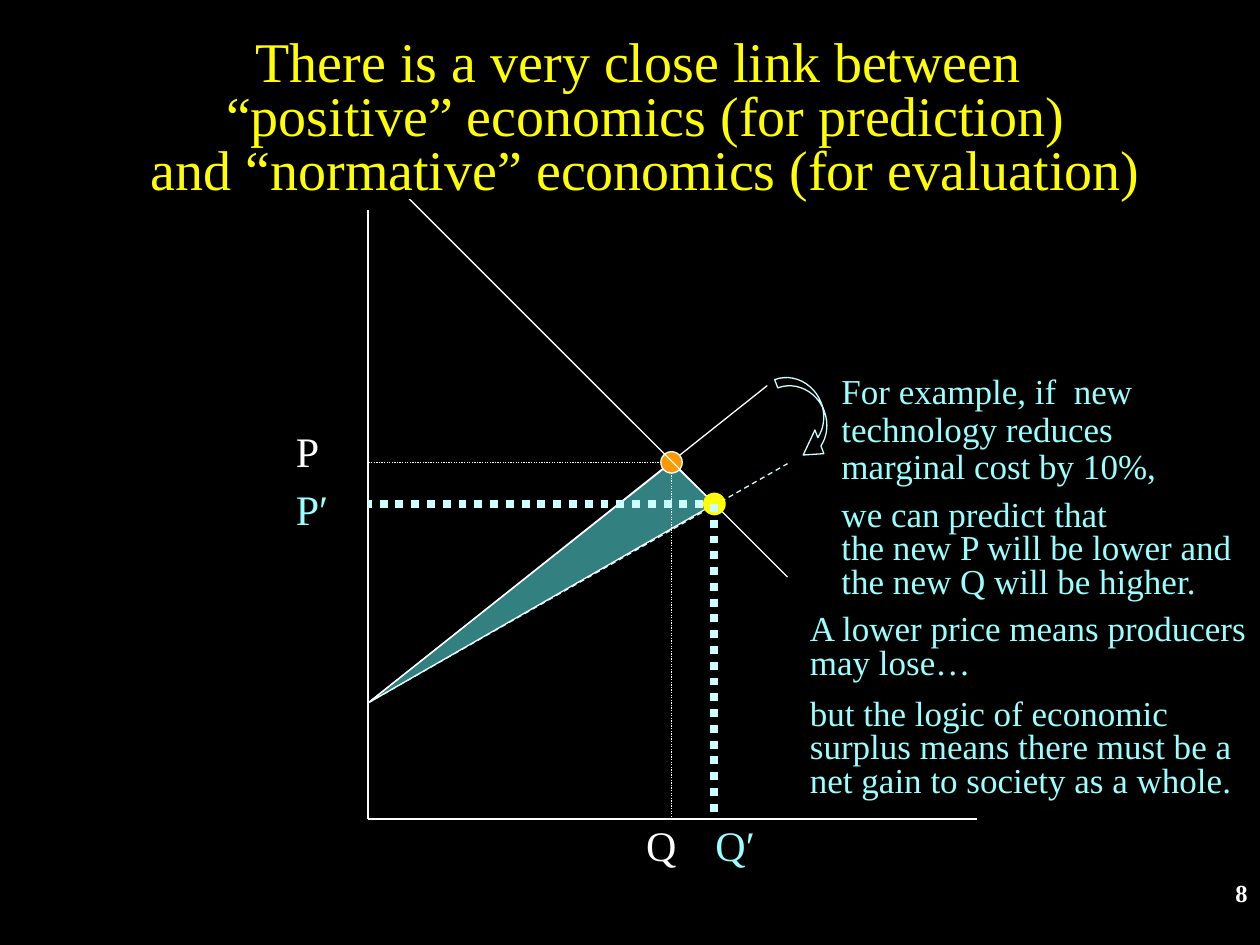
"""Build a supply and demand slide linking positive and normative economics."""
from lxml import etree
from pptx import Presentation
from pptx.dml.color import RGBColor
from pptx.enum.dml import MSO_LINE
from pptx.enum.shapes import MSO_CONNECTOR, MSO_SHAPE
from pptx.enum.text import MSO_ANCHOR, MSO_AUTO_SIZE, PP_ALIGN
from pptx.oxml.ns import qn
from pptx.util import Inches, Pt

STRAIGHT = MSO_CONNECTOR.STRAIGHT
OVAL, CURVED_ARROW = MSO_SHAPE.OVAL, MSO_SHAPE.CURVED_LEFT_ARROW
DOTTED, DASHED = MSO_LINE.ROUND_DOT, MSO_LINE.DASH
LEFT, CENTER, RIGHT = PP_ALIGN.LEFT, PP_ALIGN.CENTER, PP_ALIGN.RIGHT
TOP, MIDDLE = MSO_ANCHOR.TOP, MSO_ANCHOR.MIDDLE
GROW, FIXED = MSO_AUTO_SIZE.SHAPE_TO_FIT_TEXT, MSO_AUTO_SIZE.NONE

BLACK = RGBColor(0x00, 0x00, 0x00)
WHITE = RGBColor(0xFF, 0xFF, 0xFF)
YELLOW = RGBColor(0xFF, 0xFF, 0x00)
ORANGE = RGBColor(0xFF, 0x99, 0x00)
AQUA = RGBColor(0x66, 0xFF, 0xFF)
SKY = RGBColor(0x99, 0xFF, 0xFF)
PALE = RGBColor(0xCC, 0xFF, 0xFF)
FONT = "Times New Roman"

AXIS_X, AXIS_Y = 2.92, 6.5
ORIGIN = (AXIS_X, AXIS_Y)
SUPPLY_START = (AXIS_X, 5.58)
OLD_POINT, NEW_POINT = (5.33, 3.67), (5.67, 4)
DOT_SIZE = 0.17

TITLE = [
    "There is a very close link between ",
    "“positive” economics (for prediction)",
    "and “normative” economics (for evaluation)",
]
PREDICTION = ["we can predict that", "the new P will be lower and the new Q will be higher."]
LOSS = ["A lower price means producers may lose…"]
GAIN = ["but the logic of economic surplus means there must be a net gain to society as a whole."]
EXAMPLE = ["For example, if  new technology reduces marginal cost by 10%,"]

LABEL = {"size": 24, "spacing": 0.9, "before": 4.8, "wrap": False}
NOTE = {"size": 20, "color": SKY, "spacing": 0.8}
HEADING = {"size": 32, "color": YELLOW, "spacing": 0.8, "align": CENTER,
           "anchor": MIDDLE, "auto_size": FIXED, "fill": BLACK}
NUMBER = {"size": 14, "bold": True, "align": RIGHT, "auto_size": FIXED}


def style_line(line, color, width=0.75, dash=None):
    line.color.rgb = color
    line.width = Pt(width)
    if dash is not None:
        line.dash_style = dash


def add_line(slide, start, end, color=WHITE, width=0.75, dash=None):
    connector = slide.shapes.add_connector(STRAIGHT, *map(Inches, start + end))
    style_line(connector.line, color, width, dash)
    properties = connector._element.find(qn("p:spPr"))
    etree.SubElement(properties, qn("a:effectLst"))


def add_dot(slide, center, fill, outline):
    left, top = (value - DOT_SIZE / 2 for value in center)
    dot = slide.shapes.add_shape(OVAL, *map(Inches, (left, top, DOT_SIZE, DOT_SIZE)))
    dot.shadow.inherit = False
    dot.fill.solid()
    dot.fill.fore_color.rgb = fill
    style_line(dot.line, outline)


def add_surplus(slide):
    start, *corners = [tuple(map(Inches, point)) for point in (SUPPLY_START, OLD_POINT, NEW_POINT)]
    builder = slide.shapes.build_freeform(*start)
    builder.add_line_segments(corners, close=True)
    triangle = builder.convert_to_shape()
    triangle.shadow.inherit = False
    triangle.fill.solid()
    triangle.fill.fore_color.rgb = AQUA
    color = triangle._element.find(qn("p:spPr")).find(f"{qn('a:solidFill')}/{qn('a:srgbClr')}")
    etree.SubElement(color, qn("a:alpha"), val="50000")
    style_line(triangle.line, WHITE)


def add_shift_arrow(slide):
    arrow = slide.shapes.add_shape(CURVED_ARROW, *map(Inches, (6.27, 2.94, 0.28, 0.74)))
    arrow.shadow.inherit = False
    arrow.rotation = 339.3
    for index, value in enumerate((0.25, 0.718, 0.563)):
        arrow.adjustments[index] = value
    arrow.fill.background()
    style_line(arrow.line, PALE)


def add_text(slide, box, texts, style):
    shape = slide.shapes.add_textbox(*map(Inches, box))
    if "fill" in style:
        shape.fill.solid()
        shape.fill.fore_color.rgb = style["fill"]
    frame = shape.text_frame
    frame_format = {
        "word_wrap": style.get("wrap", True),
        "auto_size": style.get("auto_size", GROW),
        "vertical_anchor": style.get("anchor", TOP),
    }
    for name, value in frame_format.items():
        setattr(frame, name, value)
    paragraph_format = {
        "alignment": style.get("align", LEFT),
        "line_spacing": style.get("spacing", 1.0),
        "space_before": Pt(style.get("before", 0)),
    }
    font_format = {"name": FONT, "size": Pt(style["size"]), "bold": style.get("bold", False)}
    for index, text in enumerate(texts):
        paragraph = frame.add_paragraph() if index else frame.paragraphs[0]
        for name, value in paragraph_format.items():
            setattr(paragraph, name, value)
        run = paragraph.add_run()
        run.text = text
        for name, value in font_format.items():
            setattr(run.font, name, value)
        run.font.color.rgb = style.get("color", WHITE)


def add_old_market(slide):
    add_line(slide, (AXIS_X, 1.67), ORIGIN)
    add_line(slide, ORIGIN, (7.75, AXIS_Y))
    for end in ((OLD_POINT[0], AXIS_Y), (AXIS_X, OLD_POINT[1])):
        add_line(slide, OLD_POINT, end, dash=DOTTED)
    add_text(slide, (5.03, 6.5, 0.45, 0.46), ["Q"], LABEL)
    add_text(slide, (2.25, 3.37, 0.39, 0.46), ["P"], LABEL)
    add_line(slide, SUPPLY_START, (6.09, 3.06))
    add_dot(slide, OLD_POINT, ORANGE, WHITE)
    add_line(slide, (AXIS_X, 1.25), (6.25, 4.58))


def add_new_market(slide):
    add_line(slide, SUPPLY_START, (6.25, 3.68), PALE, dash=DASHED)
    add_dot(slide, NEW_POINT, YELLOW, YELLOW)
    add_line(slide, (5.58, NEW_POINT[1]), (AXIS_X, NEW_POINT[1]), PALE, 4.5, DOTTED)
    add_line(slide, NEW_POINT, (NEW_POINT[0], AXIS_Y), PALE, 4.5, DOTTED)
    new_label = {**LABEL, "color": SKY}
    add_text(slide, (5.58, 6.5, 0.52, 0.46), ["Q′"], new_label)
    add_text(slide, (2.25, 3.83, 0.46, 0.46), ["P′"], new_label)


def main():
    presentation = Presentation()
    presentation.slide_width, presentation.slide_height = Inches(10), Inches(7.5)
    slide = presentation.slides.add_slide(presentation.slide_layouts[6])
    slide.background.fill.solid()
    slide.background.fill.fore_color.rgb = BLACK

    add_surplus(slide)
    add_old_market(slide)
    add_text(slide, (6.58, 2.92, 2.83, 1.01), EXAMPLE, {**NOTE, "spacing": 0.9, "before": 4})
    add_text(slide, (0.25, 0.33, 9.75, 1.25), TITLE, HEADING)
    add_new_market(slide)
    add_text(slide, (6.58, 3.92, 3.42, 0.91), PREDICTION, NOTE)
    add_text(slide, (6.33, 4.83, 3.67, 0.64), LOSS, NOTE)
    add_text(slide, (6.33, 5.5, 3.67, 0.91), GAIN, NOTE)
    add_shift_arrow(slide)
    add_text(slide, (8.75, 6.92, 1.25, 0.33), ["8"], NUMBER)
    presentation.save("out.pptx")


if __name__ == "__main__":
    main()
